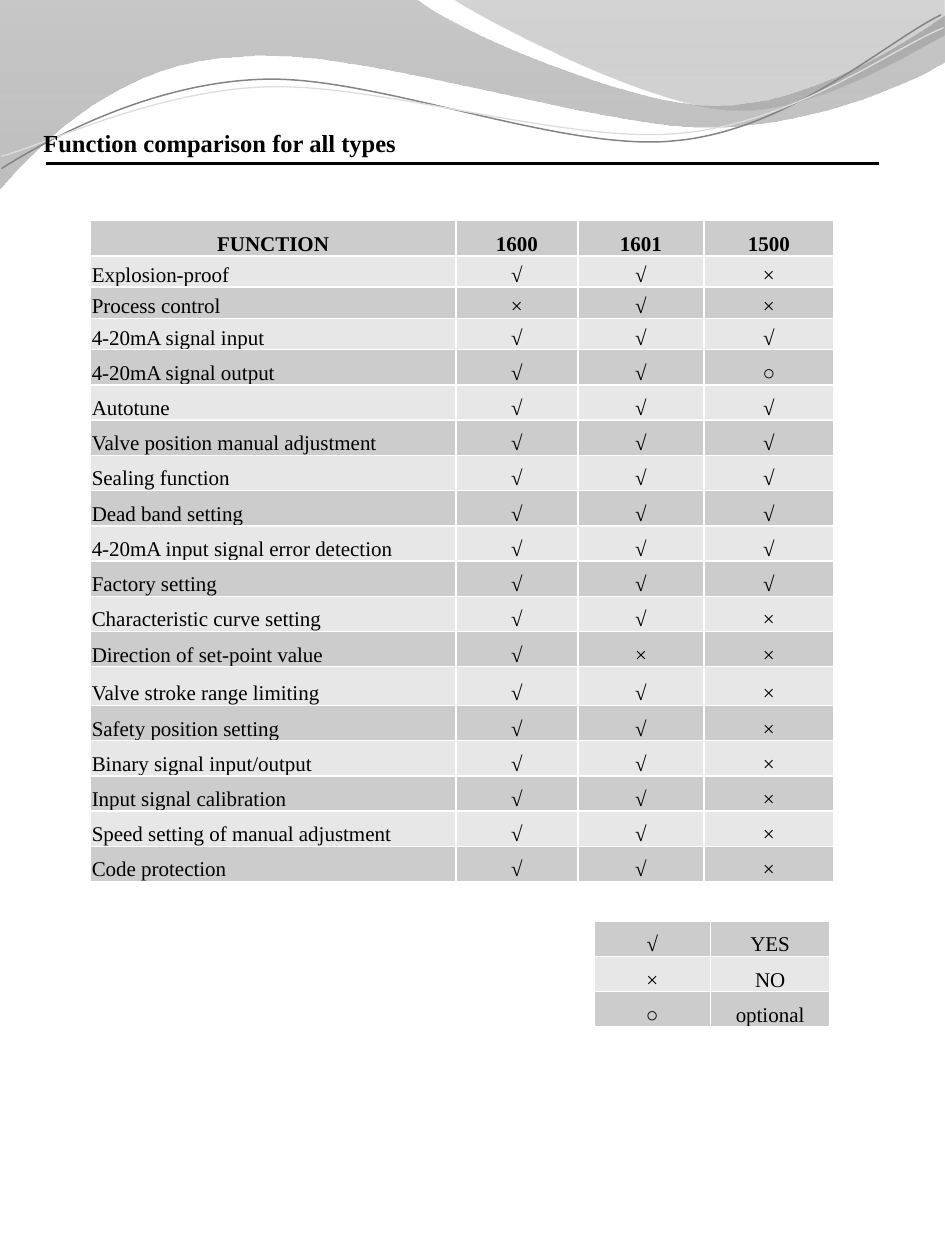
from dataclasses import dataclass
from typing import Any, NamedTuple

from lxml.etree import SubElement
from pptx import Presentation
from pptx.dml.color import RGBColor as Rgb
from pptx.enum.shapes import MSO_CONNECTOR as Connector
from pptx.enum.text import MSO_ANCHOR as Anchor, MSO_AUTO_SIZE as AutoSize, PP_ALIGN as Align
from pptx.oxml import parse_xml
from pptx.oxml.ns import nsdecls, qn
from pptx.util import Cm, Pt


@dataclass(frozen=True)
class Theme:
    font: str = "Times New Roman"
    title_size: float = 14
    table_size: float = 12
    ink: str = "000000"
    border: str = "FFFFFF"
    border_width: float = 1
    dark_band: str = "CCCCCC"
    light_band: str = "E7E7E7"
    dark_curve: str = "848484"
    light_curve: str = "DDDDDD"
    wave_bottom: str = "888888"
    veil_top: str = "6F6F6F"
    veil_bottom: str = "9D9D9D"


class Stop(NamedTuple):
    position: float
    color: str
    opacity: int


class Wave(NamedTuple):
    start: tuple[float, float]
    steps: list[tuple[float, ...]]
    stops: tuple[Stop, ...] = ()
    line_color: str = ""
    line_width: float = 0


class Grid(NamedTuple):
    left: float
    top: float
    columns: list[float]
    heights: list[float]
    rows: list[list[str]]
    has_header: bool
    has_labels: bool


THEME = Theme()
ROW = 0.71
LOW_ROW = 0.63
TALL_ROW = 0.78

WAVES = [
    Wave((0, -0.03), [
        (8.38, -0.03),
        (9.07, 0.56, 12.65, 2.13, 14.45, 2.13),
        (16.26, 2.13, 18.26, 0.86, 19.05, 0.3),
        (19.08, 1.22),
        (18.75, 1.47, 16.56, 2.57, 14.2, 2.57),
        (11.84, 2.54, 7.26, 0.94, 4.9, 1.14),
        (2.46, 1.19, 0.86, 2.82, -0.03, 3.84),
        (0, -0.03),
    ], stops=(Stop(0, THEME.dark_curve, 45), Stop(1, THEME.wave_bottom, 55))),
    Wave((9.12, -0.03), [
        (9.7, 0.38, 12.98, 2.08, 14.66, 2.21),
        (16.31, 2.34, 18.31, 1.09, 19.05, 0.71),
        (19.05, 0),
        (9.12, -0.03),
    ], stops=(Stop(0, THEME.veil_top, 30), Stop(0.8, THEME.veil_bottom, 45))),
    Wave((0.03, 3.4), [
        (0.91, 2.84, 3, 1.68, 5.26, 1.6),
        (7.52, 1.5, 11.3, 3.07, 13.59, 2.84),
        (15.9, 2.64, 17.86, 0.84, 18.97, 0.3),
    ], line_color=THEME.dark_curve, line_width=0.85),
    Wave((0.03, 3.15), [
        (0.91, 2.92, 3.1, 1.83, 5.38, 1.75),
        (7.67, 1.68, 11.4, 2.9, 13.67, 2.69),
        (15.95, 2.51, 17.91, 1.02, 19.02, 0.56),
    ], line_color=THEME.light_curve, line_width=0.75),
]

FUNCTIONS = [
    ("Explosion-proof", "√√×"),
    ("Process control", "×√×"),
    ("4-20mA signal input", "√√√"),
    ("4-20mA signal output", "√√○"),
    ("Autotune", "√√√"),
    ("Valve position manual adjustment", "√√√"),
    ("Sealing function", "√√√"),
    ("Dead band setting", "√√√"),
    ("4-20mA input signal error detection", "√√√"),
    ("Factory setting", "√√√"),
    ("Characteristic curve setting", "√√×"),
    ("Direction of set-point value", "√××"),
    ("Valve stroke range limiting", "√√×"),
    ("Safety position setting", "√√×"),
    ("Binary signal input/output", "√√×"),
    ("Input signal calibration", "√√×"),
    ("Speed setting of manual adjustment", "√√×"),
    ("Code protection", "√√×"),
]

COMPARISON = Grid(
    1.82, 4.45, [7.37, 2.46, 2.54, 2.62],
    [ROW] + [LOW_ROW] * 3 + [ROW] * 9 + [TALL_ROW] + [ROW] * 5,
    [["FUNCTION", "1600", "1601", "1500"]] + [[name, *marks] for name, marks in FUNCTIONS],
    has_header=True, has_labels=True)
LEGEND = Grid(
    11.98, 18.57, [2.34, 2.41], [ROW] * 3,
    [["√", "YES"], ["×", "NO"], ["○", "optional"]],
    has_header=False, has_labels=False)


def apply_format(target: Any, values: dict[str, Any]) -> None:
    for name, value in values.items():
        setattr(target, name, value)


def write_text(para: Any, text: str, size: float, bold: bool) -> None:
    span = para.add_run()
    span.text = text
    apply_format(span.font, {"name": THEME.font, "size": Pt(size), "bold": bold})
    span.font.color.rgb = Rgb.from_string(THEME.ink)


def bend_segments(shape: Any, steps: list[tuple[float, ...]]) -> None:
    segments = list(shape._element.spPr.iter(qn("a:lnTo")))
    for segment, step in zip(segments, steps):
        if len(step) == 2:
            continue
        segment.tag = qn("a:cubicBezTo")
        segment.clear()
        for x, y in zip(step[::2], step[1::2]):
            point = SubElement(segment, qn("a:pt"))
            point.set("x", str(Cm(x) - shape.left))
            point.set("y", str(Cm(y) - shape.top))


def draw_wave(page: Any, wave: Wave) -> None:
    builder = page.shapes.build_freeform(*map(Cm, wave.start), scale=1.0)
    ends = [(Cm(step[-2]), Cm(step[-1])) for step in wave.steps]
    builder.add_line_segments(ends, close=bool(wave.stops))
    shape = builder.convert_to_shape()
    bend_segments(shape, wave.steps)
    shape.shadow.inherit = False
    if not wave.stops:
        shape.fill.background()
        shape.line.color.rgb = Rgb.from_string(wave.line_color)
        shape.line.width = Pt(wave.line_width)
        return
    shape.line.fill.background()
    shape.fill.gradient()
    shape.fill.gradient_angle = 270
    for target, stop in zip(shape.fill.gradient_stops, wave.stops):
        target.position = stop.position
        target.color.rgb = Rgb.from_string(stop.color)
    for color, stop in zip(shape._element.spPr.iter(qn("a:srgbClr")), wave.stops):
        SubElement(color, qn("a:alpha")).set("val", str(stop.opacity * 1000))


def draw_borders(cell: Any) -> None:
    properties = cell._tc.get_or_add_tcPr()
    for index, side in enumerate(("lnL", "lnR", "lnT", "lnB")):
        properties.insert(index, parse_xml(
            f'<a:{side} {nsdecls("a")} w="{Pt(THEME.border_width)}"><a:solidFill>'
            f'<a:srgbClr val="{THEME.border}"/></a:solidFill></a:{side}>'))


def draw_grid(page: Any, grid: Grid) -> None:
    frame = page.shapes.add_table(
        len(grid.rows), len(grid.columns), Cm(grid.left), Cm(grid.top),
        Cm(sum(grid.columns)), Cm(sum(grid.heights)))
    table = frame.table
    apply_format(table, {"first_row": False, "horz_banding": False})
    for column, width in zip(table.columns, grid.columns):
        column.width = Cm(width)
    for row_index, (row, height) in enumerate(zip(table.rows, grid.heights)):
        row.height = Cm(height)
        header = grid.has_header and row_index == 0
        side = Cm(0.18 if header else 0.03)
        band = THEME.light_band if row_index % 2 else THEME.dark_band
        for column_index, cell in enumerate(row.cells):
            apply_format(cell, {
                "margin_left": side, "margin_right": side,
                "margin_top": Cm(0 if header else 0.03), "margin_bottom": 0,
                "vertical_anchor": Anchor.MIDDLE if header else Anchor.BOTTOM})
            cell.fill.solid()
            cell.fill.fore_color.rgb = Rgb.from_string(band)
            draw_borders(cell)
            para = cell.text_frame.paragraphs[0]
            label = grid.has_labels and column_index == 0 and not header
            para.alignment = Align.LEFT if label else Align.CENTER
            if header:
                para.line_spacing = 1.5
            write_text(para, grid.rows[row_index][column_index], THEME.table_size, header)


def draw_title(page: Any, text: str) -> None:
    title = page.shapes.title
    page.shapes._spTree.append(title._element)
    apply_format(title, {"left": Cm(0.62), "top": Cm(2.45),
                         "width": Cm(9.78), "height": Cm(0.86)})
    apply_format(title.text_frame, {"word_wrap": True, "vertical_anchor": Anchor.TOP,
                                    "auto_size": AutoSize.SHAPE_TO_FIT_TEXT})
    para = title.text_frame.paragraphs[0]
    para.alignment = Align.LEFT
    write_text(para, text, THEME.title_size, True)


def draw_rule(page: Any) -> None:
    rule = page.shapes.add_connector(
        Connector.STRAIGHT, Cm(0.92), Cm(3.3), Cm(17.72), Cm(3.3))
    rule.line.color.rgb = Rgb.from_string(THEME.ink)
    rule.line.width = Pt(1.5)
    SubElement(rule._element.spPr, qn("a:effectLst"))


def main() -> None:
    deck = Presentation()
    apply_format(deck, {"slide_width": Cm(19.05), "slide_height": Cm(25.4)})
    page = deck.slides.add_slide(deck.slide_layouts[5])
    for wave in WAVES:
        draw_wave(page, wave)
    draw_grid(page, COMPARISON)
    draw_title(page, "Function comparison for all types")
    draw_rule(page)
    draw_grid(page, LEGEND)
    deck.save("out.pptx")


if __name__ == "__main__":
    main()
